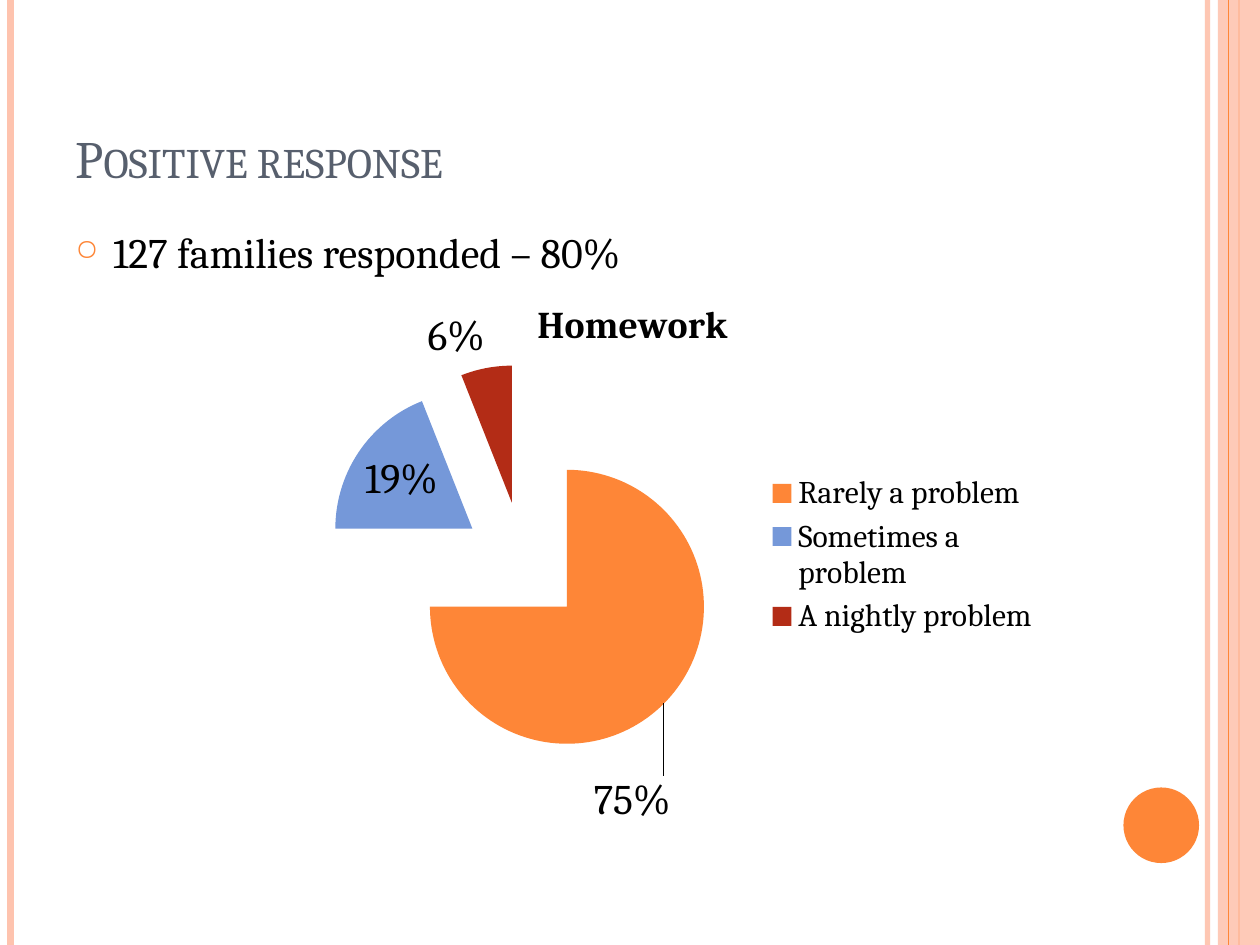
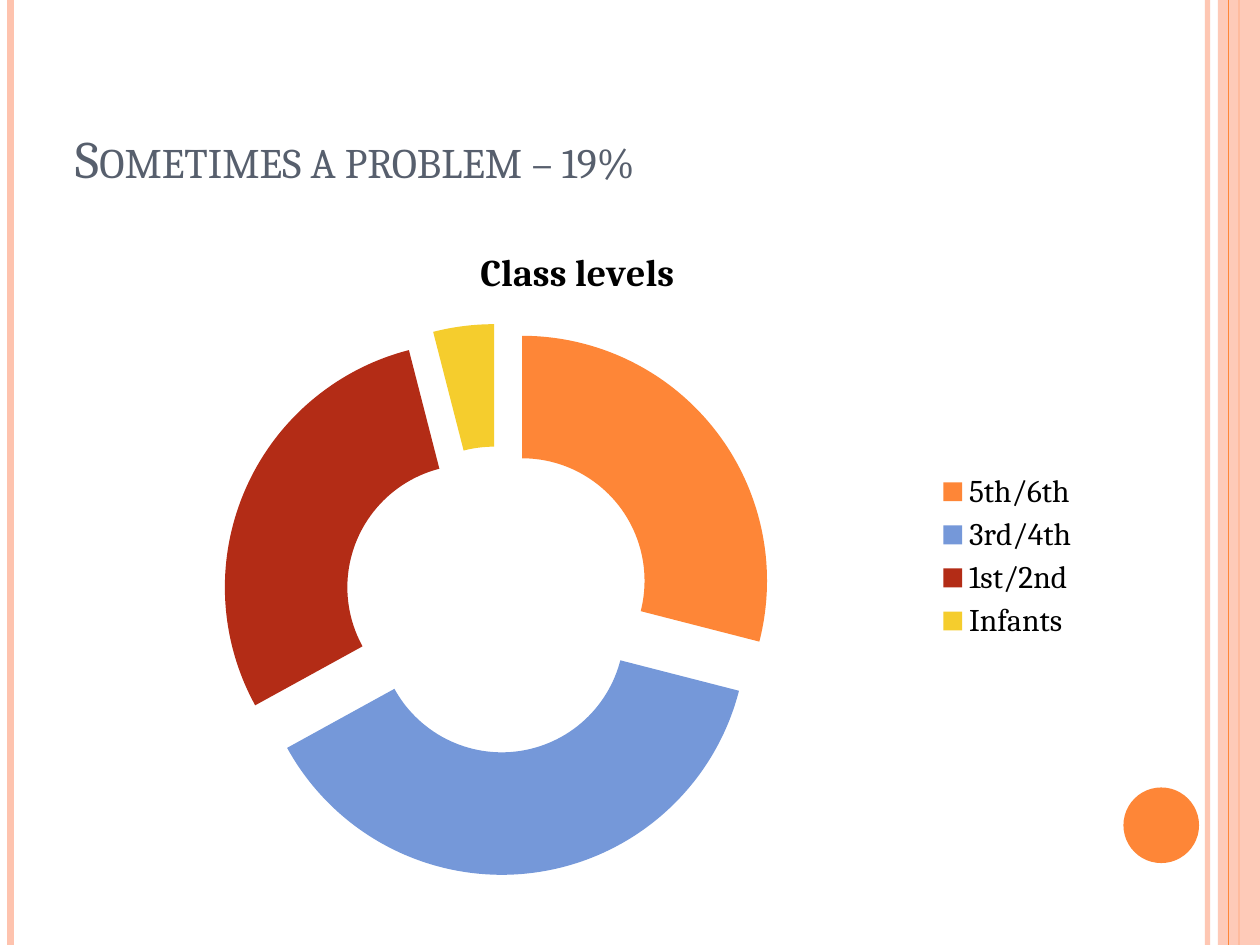
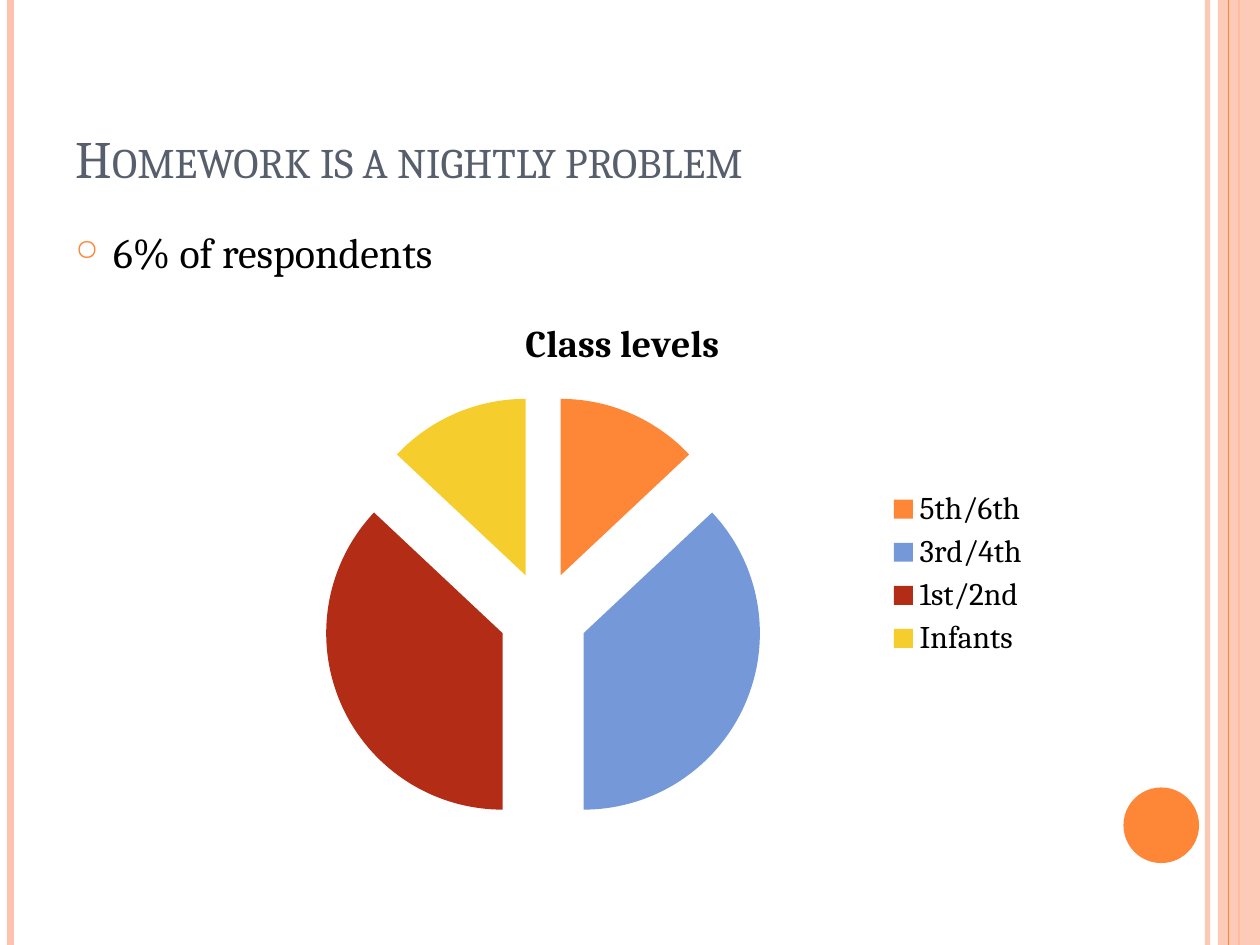
from lxml import etree
from pptx import Presentation, util as u
from pptx.chart.data import CategoryChartData
from pptx.dml.color import RGBColor
from pptx.enum import chart as charts, shapes, text
from pptx.oxml import ns

# Shared style
FONT = "Cambria"
BLACK, SLATE, ORANGE, PEACH = "000000", "575F6D", "FE8637", "FEC3AE"
SLICE_COLOURS = [ORANGE, "7598D9", "B32C16", "F5CD2D"]
COLUMNS, ROWS = 120, 90
CLASS_LEVELS = ["5th/6th", "3rd/4th", "1st/2nd", "Infants"]


def colour(value):
    return RGBColor.from_string(value)


def style_font(font, size, value=BLACK, bold=False):
    font.name, font.size, font.bold = FONT, u.Pt(size), bold
    font.color.rgb = colour(value)


def add_child(parent, tag, **attributes):
    return etree.SubElement(parent, ns.qn(tag), attributes)


def set_alpha(filled, percent):
    """Make the solid colour inside an element partly transparent."""
    add_child(next(filled.iter(ns.qn("a:srgbClr"))), "a:alpha", val=str(percent * 1000))


def manual_layout(**values):
    layout = etree.Element(ns.qn("c:layout"))
    manual = add_child(layout, "c:manualLayout")
    for name, value in values.items():
        add_child(manual, f"c:{name}", val=str(value))
    return layout


class Deck:
    def __init__(self):
        self.presentation = Presentation()
        self.presentation.slide_width = u.Inches(10)
        self.presentation.slide_height = u.Inches(7.5)
        self.slide = None

    def box(self, left, top, width, height):
        """Turn grid columns and rows into lengths."""
        column = self.presentation.slide_width / COLUMNS
        row = self.presentation.slide_height / ROWS
        return [round(n) for n in (left * column, top * row, width * column, height * row)]

    def new_slide(self, title):
        layout = self.presentation.slide_layouts[5]
        self.slide = self.presentation.slides.add_slide(layout)
        self.frame()
        self.title(title)

    # Side bands and corner disc
    def frame(self):
        self.rule(115, PEACH, 3, 93)
        self.rule(1, PEACH, 4.5)
        self.rule(118, ORANGE, 1.5)
        self.shape(shapes.MSO_SHAPE.RECTANGLE, (116, 0, 4, ROWS), PEACH, 87)
        self.rule(117, ORANGE, 0.75)
        self.shape(shapes.MSO_SHAPE.OVAL, (107, 75, 7.2, 7.2), ORANGE)

    def rule(self, column, value, width, opacity=100):
        left, top, _, height = self.box(column, 0, 0, ROWS)
        line = self.slide.shapes.add_connector(
            shapes.MSO_CONNECTOR.STRAIGHT, left, top, left, height)
        line.line.color.rgb = colour(value)
        line.line.width = u.Pt(width)
        properties = line._element.spPr
        if opacity < 100:
            set_alpha(properties, opacity)
        add_child(properties, "a:effectLst")

    def shape(self, kind, place, value, opacity=100):
        shape = self.slide.shapes.add_shape(kind, *self.box(*place))
        shape.shadow.inherit = False
        shape.fill.solid()
        shape.fill.fore_color.rgb = colour(value)
        shape.line.fill.background()
        if opacity < 100:
            set_alpha(shape._element.spPr, opacity)

    # Text
    def title(self, wording):
        title = self.slide.shapes.title
        title.left, title.top, title.width, title.height = self.box(6, 3.6, 98, 15)
        frame = title.text_frame
        frame.text = wording
        frame.auto_size = text.MSO_AUTO_SIZE.NONE
        frame.vertical_anchor = text.MSO_ANCHOR.BOTTOM
        paragraph = frame.paragraphs[0]
        paragraph.alignment = text.PP_ALIGN.LEFT
        run = paragraph.runs[0]
        style_font(run.font, 30, SLATE)
        run.font._element.set("cap", "small")

    def bullet(self, wording):
        frame = self.slide.shapes.add_textbox(*self.box(6, 21, 98, 64)).text_frame
        frame.word_wrap = True
        frame.text = wording
        paragraph = frame.paragraphs[0]
        paragraph.space_before = u.Pt(6)
        style_font(paragraph.runs[0].font, 24)
        properties = paragraph._element.get_or_add_pPr()
        indent = u.Inches(0.3)
        properties.set("marL", str(indent))
        properties.set("indent", str(-indent))
        add_child(add_child(properties, "a:buClr"), "a:srgbClr", val=ORANGE)
        add_child(properties, "a:buSzPct", val="70000")
        add_child(properties, "a:buChar", char="○")

    # Charts
    def chart(self, kind, place, title, categories, values, explosion, number_format="General"):
        data = CategoryChartData(number_format=number_format)
        data.categories = categories
        data.add_series(title, values)
        chart = self.slide.shapes.add_chart(kind, *self.box(*place), data).chart
        style_font(chart.font, 18)
        chart.has_title = True
        heading = chart.chart_title.text_frame
        heading.text = title
        style_font(heading.paragraphs[0].runs[0].font, 21.6, bold=True)
        chart.has_legend = True
        chart.legend.position = charts.XL_LEGEND_POSITION.RIGHT
        chart.legend.include_in_layout = False
        style_font(chart.legend.font, 18)

        plot = chart.plots[0]
        plot.vary_by_categories = True
        series = plot.series[0]
        exploded = etree.Element(ns.qn("c:explosion"), val=str(explosion))
        series.format._element.get_or_add_spPr().addnext(exploded)
        for index, value in enumerate(SLICE_COLOURS[:len(values)]):
            fill = series.points[index].format.fill
            fill.solid()
            fill.fore_color.rgb = colour(value)
        return chart

    def slice_labels(self, chart, positions):
        points = chart.plots[0].series[0].points
        for index, position in enumerate(positions):
            label = points[index].data_label
            style_font(label.font, 24)
            label.position = position

    def move_label(self, chart, index, wording, x, y):
        """Give one slice label its own text and an offset from its slice."""
        series = chart.plots[0].series[0]
        label = series.points[index].data_label
        label.text_frame.text = wording
        style_font(label.text_frame.paragraphs[0].runs[0].font, 24)
        labels = series._element.find(ns.qn("c:dLbls"))
        element = labels.findall(ns.qn("c:dLbl"))[index]
        element.find(ns.qn("c:idx")).addnext(manual_layout(x=x, y=y))

    def place_plot(self, chart, x, y, w, h):
        area = next(chart._chartSpace.iter(ns.qn("c:plotArea")))
        area.insert(0, manual_layout(layoutTarget="inner", xMode="edge", yMode="edge",
                                     x=x, y=y, w=w, h=h))


def main():
    deck = Deck()
    pie, doughnut = charts.XL_CHART_TYPE.PIE_EXPLODED, charts.XL_CHART_TYPE.DOUGHNUT_EXPLODED
    pie = charts.XL_CHART_TYPE.PIE
    doughnut = charts.XL_CHART_TYPE.DOUGHNUT
    label_position = charts.XL_LABEL_POSITION

    # Overall response
    deck.new_slide("Positive response")
    deck.bullet("127 families responded – 80%")
    homework = deck.chart(
        pie, (20.25, 26.2, 80, 53.3), "Homework",
        ["Rarely a problem", "Sometimes a problem", "A nightly problem"],
        [0.75, 0.19, 0.06], 45, "0%")
    deck.place_plot(homework, 0.08, 0.16, 0.58, 0.71)
    deck.slice_labels(homework, [label_position.OUTSIDE_END, label_position.INSIDE_END,
                                 label_position.OUTSIDE_END])
    deck.move_label(homework, 0, "75%", -0.09, 0.12)

    # Families with occasional problems
    deck.new_slide("Sometimes a problem – 19%")
    deck.chart(doughnut, (6, 21, 98, 64), "Class levels", CLASS_LEVELS, [29, 38, 29, 4], 25)

    # Families with nightly problems
    deck.new_slide("Homework is a nightly problem")
    deck.bullet("6% of respondents")
    deck.chart(pie, (19.3, 28, 80, 53.3), "Class levels", CLASS_LEVELS, [13, 37, 37, 13], 25)

    deck.presentation.save("out.pptx")


if __name__ == "__main__":
    main()
